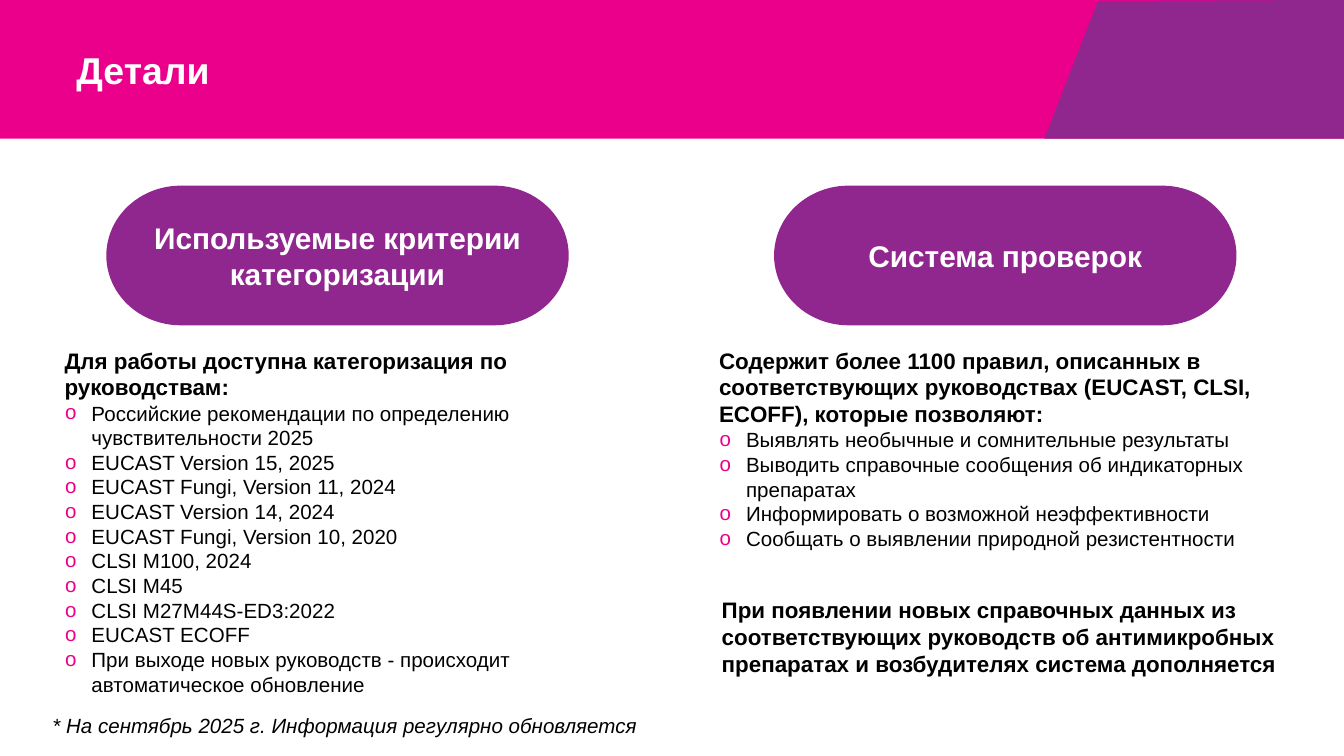
from lxml.etree import SubElement
from pptx import Presentation
from pptx.dml.color import RGBColor
from pptx.enum.shapes import MSO_SHAPE
from pptx.enum.text import MSO_ANCHOR, PP_ALIGN
from pptx.oxml.ns import qn
from pptx.util import Cm, Pt

COLORS = {"pink": "EB008B", "plum": "90278E", "white": "FFFFFF", "black": "000000"}


def paint(shape, color):
    shape.shadow.inherit = False
    shape.fill.solid()
    shape.fill.fore_color.rgb = RGBColor.from_string(COLORS[color])
    shape.line.fill.background()


def style(para, size, color="black", bold=False, italic=False):
    font = para.font
    font.name, font.size = "Arial", Pt(size)
    font.bold, font.italic = bold, italic
    font.color.rgb = RGBColor.from_string(COLORS[color])


deck = Presentation()
deck.slide_width, deck.slide_height = Cm(25.4), Cm(14.29)
slide = deck.slides.add_slide(deck.slide_layouts[5])
shapes = slide.shapes

# Header band with its slanted corner
band = shapes.add_shape(MSO_SHAPE.RECTANGLE, 0, 0, Cm(25.4), Cm(2.62))
paint(band, "pink")
pen = shapes.build_freeform(Cm(20.75), Cm(0.02))
pen.add_line_segments([(Cm(25.4), 0), (Cm(25.4), Cm(2.62)), (Cm(19.74), Cm(2.62))])
paint(pen.convert_to_shape(), "plum")

title = shapes.title
title.left, title.top, title.width, title.height = Cm(1.19), 0, Cm(17.17), Cm(2.62)
shapes._spTree.append(title._element)  # in front of the band
title.text_frame.text = "Детали"
title.text_frame.vertical_anchor = MSO_ANCHOR.MIDDLE
head = title.text_frame.paragraphs[0]
head.alignment = PP_ALIGN.LEFT
style(head, 20, "white", bold=True)

# Two columns: pill left, pill text, list left, list width, lead, points
columns = [
    (2.01, "Используемые критерии категоризации", 0.74, 11.28,
     "Для работы доступна категоризация по руководствам:",
     ["Российские рекомендации по определению чувствительности 2025",
      "EUCAST Version 15, 2025",
      "EUCAST Fungi, Version 11, 2024",
      "EUCAST Version 14, 2024",
      "EUCAST Fungi, Version 10, 2020",
      "CLSI M100, 2024",
      "CLSI M45",
      "CLSI M27M44S-ED3:2022",
      "EUCAST ECOFF",
      "При выходе новых руководств - происходит автоматическое обновление"]),
    (14.63, "Система проверок", 13.11, 11.81,
     "Содержит более 1100 правил, описанных в соответствующих руководствах "
     "(EUCAST, CLSI, ECOFF), которые позволяют:",
     ["Выявлять необычные и сомнительные результаты",
      "Выводить справочные сообщения об индикаторных препаратах",
      "Информировать о возможной неэффективности",
      "Сообщать о выявлении природной резистентности"]),
]
for pill_left, label, left, width, lead, points in columns:
    pill = shapes.add_shape(MSO_SHAPE.FLOWCHART_TERMINATOR,
                            Cm(pill_left), Cm(3.51), Cm(8.74), Cm(2.64))
    paint(pill, "plum")
    pill.text_frame.text = label
    para = pill.text_frame.paragraphs[0]
    para.alignment = PP_ALIGN.CENTER
    style(para, 16, "white", bold=True)

    height = 6.93 if len(points) > 4 else 4.83
    frame = shapes.add_textbox(Cm(left), Cm(6.43), Cm(width), Cm(height)).text_frame
    frame.word_wrap = True
    frame.text = "\n".join([lead, *points])
    first, *items = frame.paragraphs
    first._p.get_or_add_pPr().set("marL", str(Cm(0.23)))
    style(first, 12, bold=True)
    for item in items:
        props = item._p.get_or_add_pPr()
        props.set("marL", str(Cm(0.74)))
        props.set("indent", str(Cm(-0.5)))
        tint = SubElement(props, qn("a:buClr"))
        SubElement(tint, qn("a:srgbClr"), val=COLORS["pink"])
        SubElement(props, qn("a:buFont"), typeface="Arial")
        SubElement(props, qn("a:buChar"), char="o")
        style(item, 11)

# Closing remark and footnote
notes = [
    (13.39, 11.15, 11.23, 1.8, 12, True,
     "При появлении новых справочных данных из соответствующих руководств об "
     "антимикробных препаратах и возбудителях система дополняется"),
    (0.74, 13.36, 17.17, 1.19, 11, False,
     "* На сентябрь 2025 г. Информация регулярно обновляется"),
]
for left, top, width, height, size, bold, text in notes:
    frame = shapes.add_textbox(Cm(left), Cm(top), Cm(width), Cm(height)).text_frame
    frame.word_wrap = True
    frame.text = text
    style(frame.paragraphs[0], size, bold=bold, italic=not bold)

deck.save("out.pptx")
